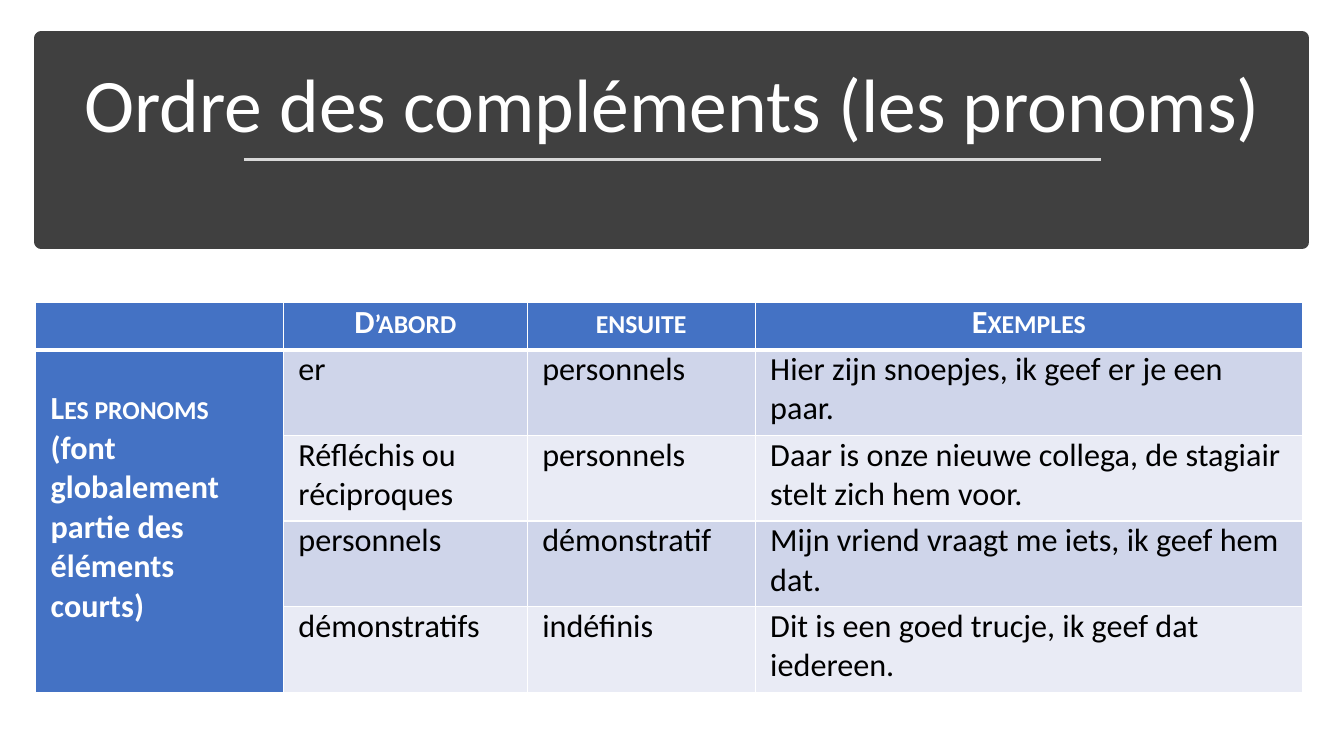
import pptx
import pptx.util
import pptx.dml.color
import pptx.enum.shapes
import pptx.enum.text
import pptx.oxml
import pptx.oxml.ns

Pt = pptx.util.Pt
ALIGN = pptx.enum.text.PP_ALIGN
HEX = {"white": "FFFFFF", "black": "000000", "dark": "404040", "rule": "D9D9D9",
       "blue": "4472C4", "band": "CFD5EA", "pale": "E9EBF5"}


def color(name):
    return pptx.dml.color.RGBColor.from_string(HEX[name])


def border(cell, side, width):
    xml = (f'<a:{side} {pptx.oxml.ns.nsdecls("a")} w="{Pt(width)}"><a:solidFill>'
           f'<a:srgbClr val="{HEX["white"]}"/></a:solidFill></a:{side}>')
    cell._tc.get_or_add_tcPr().append(pptx.oxml.parse_xml(xml))


deck = pptx.Presentation()
deck.slide_width, deck.slide_height = Pt(960), Pt(540)
slide = deck.slides.add_slide(deck.slide_layouts[6])

# Title band
band = slide.shapes.add_shape(pptx.enum.shapes.MSO_SHAPE.RECTANGLE,
                              Pt(29.5), Pt(27.4), Pt(900.7), Pt(145.4))
band.left, band.top = Pt(29.5), Pt(27.4)
band.shadow.inherit = False
band.fill.solid()
band.fill.fore_color.rgb = color("dark")
band.line.color.rgb = color("dark")
band.line.width = Pt(10)

# Title
box = slide.shapes.add_textbox(Pt(41.8), Pt(36.7), Pt(877), Pt(73.4))
frame = box.text_frame
frame.word_wrap = True
frame.vertical_anchor = pptx.enum.text.MSO_ANCHOR.BOTTOM
title = frame.paragraphs[0]
title.text = "Ordre des compléments (les pronoms)"
title.alignment = ALIGN.CENTER
title.line_spacing = 0.9
title.font.name = "Calibri"
title.font.size = Pt(54)
title.font.color.rgb = color("white")

# Rule under the title
rule = slide.shapes.add_connector(pptx.enum.shapes.MSO_CONNECTOR.STRAIGHT,
                                  Pt(174.2), Pt(113.8), Pt(786.2), Pt(113.8))
rule.line.color.rgb = color("rule")
rule.line.width = Pt(1.75)
rule._element.spPr.append(
    pptx.oxml.parse_xml(f'<a:effectLst {pptx.oxml.ns.nsdecls("a")}/>'))

# Table: each cell is a list of (text, small caps) runs
heads = ["", "D’abord", "ensuite", "Exemples"]
body = [
    ["er", "personnels", "Hier zijn snoepjes, ik geef er je een paar."],
    ["Réfléchis ou réciproques", "personnels",
     "Daar is onze nieuwe collega, de stagiair stelt zich hem voor."],
    ["personnels", "démonstratif", "Mijn vriend vraagt me iets, ik geef hem dat."],
    ["démonstratifs", "indéfinis", "Dit is een goed trucje, ik geef dat iedereen."],
]
label = [("Les pronoms", True), (" (font globalement partie des éléments courts)", False)]
rows = [[[(head, True)] for head in heads]]
for num, texts in enumerate(body):
    rows.append([label if num == 0 else []] + [[(text, False)] for text in texts])

wide = [177, 174.2, 162.8, 391]
high = [33.8] + [61.2] * len(body)
table = slide.shapes.add_table(len(high), len(wide), Pt(25.4), Pt(216),
                               Pt(sum(wide)), Pt(sum(high))).table
for col, width in zip(table.columns, wide):
    col.width = Pt(width)
for row, height in zip(table.rows, high):
    row.height = Pt(height)

for y, row in enumerate(rows):
    for x, runs in enumerate(row):
        cell = table.cell(y, x)
        head = y == 0 or x == 0
        cell.margin_left = cell.margin_right = Pt(10.8)
        cell.margin_top = cell.margin_bottom = 0
        for side in ("lnL", "lnR", "lnT", "lnB"):
            thick = (y, side) in ((0, "lnB"), (1, "lnT"))
            border(cell, side, 3 if thick else 1)
        cell.fill.solid()
        cell.fill.fore_color.rgb = color("blue" if head else "band" if y % 2 else "pale")
        para = cell.text_frame.paragraphs[0]
        para.alignment = ALIGN.CENTER if y == 0 else ALIGN.LEFT
        para.font.name = "Calibri"
        para.font.size = Pt(23)
        para.font.bold = head
        para.font.color.rgb = color("white" if head else "black")
        for text, small in runs:
            if text:
                run = para.add_run()
                run.text = text
                if small:
                    run._r.get_or_add_rPr().set("cap", "small")

# Row label spans the body, one line down
side = table.cell(1, 0)
side.merge(table.cell(len(body), 0))
side.margin_top = Pt(28)

deck.save("out.pptx")
